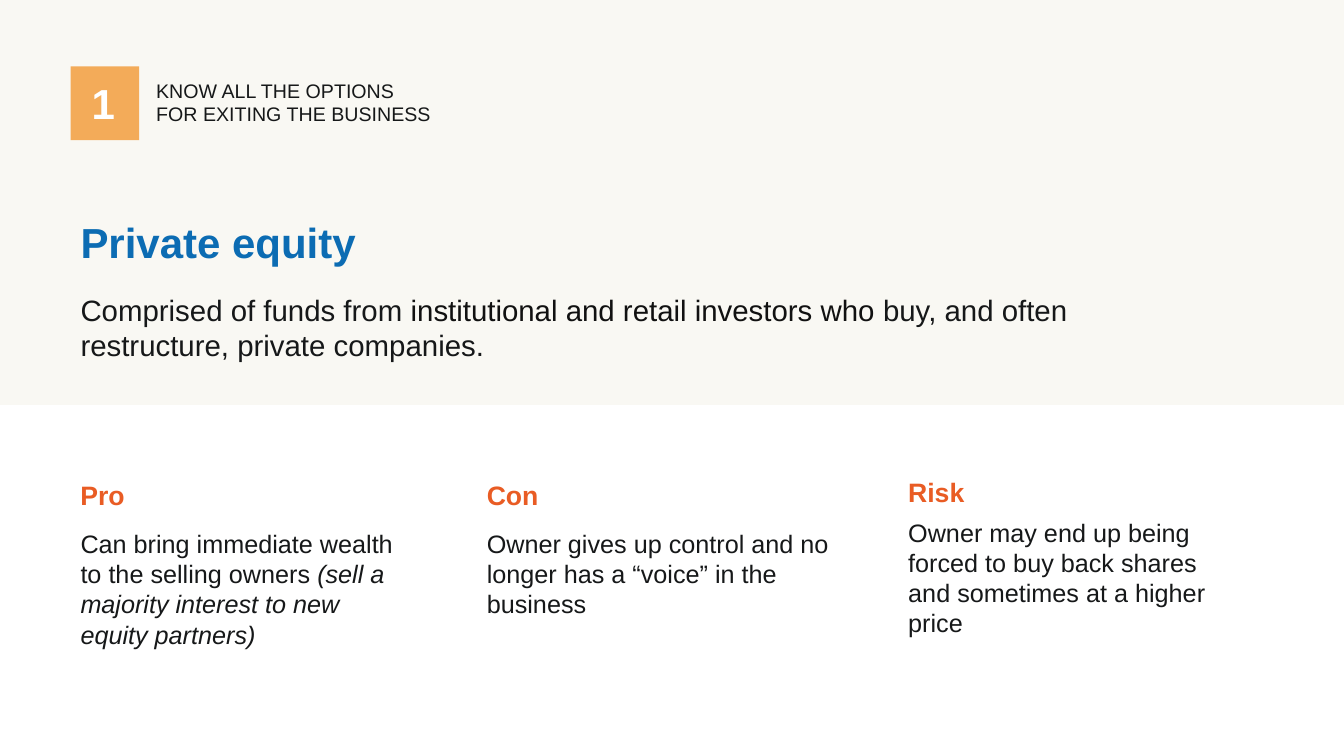
from dataclasses import dataclass

from pptx import Presentation
from pptx.dml.color import RGBColor
from pptx.enum.shapes import MSO_SHAPE
from pptx.enum.text import MSO_AUTO_SIZE
from pptx.util import Emu, Pt

RECT = MSO_SHAPE.RECTANGLE
FIT_TEXT = MSO_AUTO_SIZE.SHAPE_TO_FIT_TEXT
EMU_PER_PX = 9144  # 100 px to the inch
SLIDE_W, SLIDE_H = 1333, 750


@dataclass(frozen=True)
class Theme:
    font: str = "Arial"
    cream: str = "F9F8F3"
    white: str = "FFFFFF"
    amber: str = "F3AB59"
    blue: str = "0C6CB3"
    orange: str = "E95C24"
    ink: str = "161819"
    black: str = "111111"
    title: int = 30
    lead: int = 21
    heading: int = 19
    body: int = 18
    label: int = 14


THEME = Theme()

# Left edge, heading top, heading width, body top, body size, heading, body runs
COLUMNS = [
    (70, 470, 384, 519, (345, 131), "Pro",
     [("Can bring immediate wealth to the selling owners ", {}),
      ("(sell a majority interest to new equity partners)", {"italic": True})]),
    (473, 470, 319, 519, (360, 101), "Con",
     [("Owner gives up control and no longer has a “voice” in the business", {})]),
    (891, 467, 384, 508, (326, 131), "Risk",
     [("Owner may end up being forced to buy back shares "
       "and sometimes at a higher price", {})]),
]


def px(n):
    return Emu(n * EMU_PER_PX)


def add_block(slide, x, y, w, h, color):
    sp = slide.shapes.add_shape(RECT, px(x), px(y), px(w), px(h))
    sp.shadow.inherit = False
    sp.fill.solid()
    sp.fill.fore_color.rgb = RGBColor.from_string(color)
    sp.line.fill.background()


def add_text(slide, x, y, w, h, runs, size, color=THEME.ink, bold=False):
    """Add one paragraph of (text, overrides) runs."""
    tf = slide.shapes.add_textbox(px(x), px(y), px(w), px(h)).text_frame
    tf.word_wrap = True
    tf.auto_size = FIT_TEXT
    p = tf.paragraphs[0]
    for text, style in runs:
        first, *rest = text.split("\n")
        for i, line in enumerate([first, *rest]):
            if i:
                p.add_line_break()
            r = p.add_run()
            r.text = line
            r.font.name = THEME.font
            r.font.size = Pt(size)
            r.font.bold = bold
            r.font.italic = style.get("italic", False)
            r.font.color.rgb = RGBColor.from_string(style.get("color", color))


def add_column(slide, x, head_y, head_w, body_y, body_size, heading, runs):
    add_text(slide, x, head_y, head_w, 42, [(heading, {})],
             THEME.heading, THEME.orange, bold=True)
    add_text(slide, x, body_y, *body_size, runs, THEME.body)


def main():
    prs = Presentation()
    prs.slide_width, prs.slide_height = px(SLIDE_W), px(SLIDE_H)
    s = prs.slides.add_slide(prs.slide_layouts[6])

    # Background and lower panel
    s.background.fill.solid()
    s.background.fill.fore_color.rgb = RGBColor.from_string(THEME.cream)
    add_block(s, 0, 402, SLIDE_W, SLIDE_H - 402, THEME.white)

    # Numbered section label
    add_block(s, 70, 66, 68, 73, THEME.amber)
    add_text(s, 81, 72, 66, 61, [("1", {})], THEME.title, THEME.white, bold=True)
    add_text(s, 145, 73, 351, 57,
             [("KNOW ALL THE OPTIONS\nFOR EXITING THE BUSINESS", {})], THEME.label)

    # Title and definition
    add_text(s, 70, 210, 621, 61, [("Private equity", {})],
             THEME.title, THEME.blue, bold=True)
    add_text(s, 70, 285, 1138, 81,
             [("Comprised of funds from ", {}),
              ("institutional and retail investors who", {"color": THEME.black}),
              (" buy, and often restructure, private companies.", {})], THEME.lead)

    # Pro, con and risk
    for column in COLUMNS:
        add_column(s, *column)

    prs.save("out.pptx")


if __name__ == "__main__":
    main()
